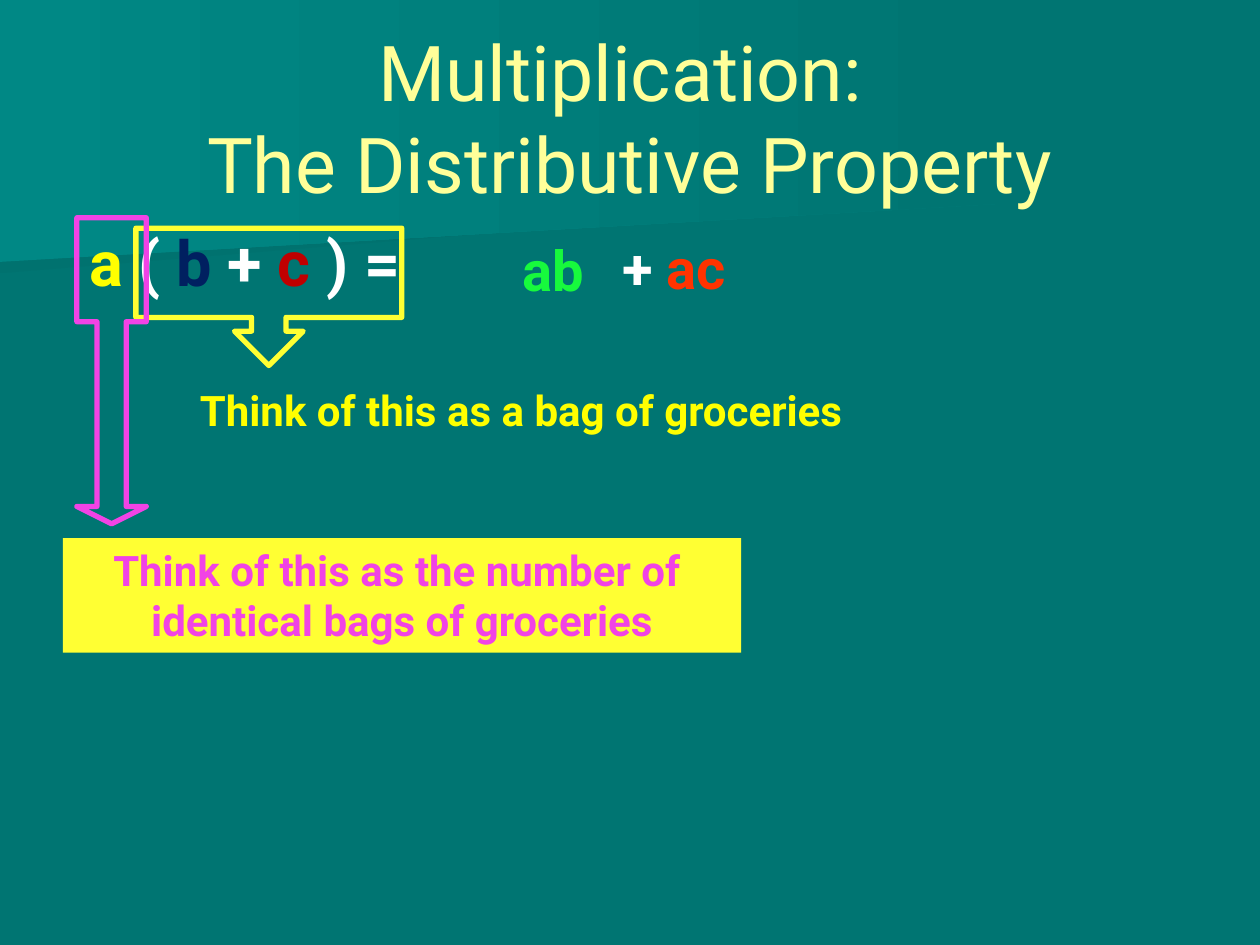
from pptx import Presentation
from pptx.dml.color import RGBColor
from pptx.enum import shapes as sh, text as tx
from pptx.util import Cm, Pt

FONT = "Roboto"
TEAL = RGBColor(0x00, 0x75, 0x72)
DARK = RGBColor(0x00, 0x72, 0x6F)
LIGHT = RGBColor(0x00, 0x88, 0x85)
CREAM = RGBColor(0xFF, 0xFF, 0x99)
YELLOW = RGBColor(0xFF, 0xFF, 0x00)
GOLD = RGBColor(0xFF, 0xFF, 0x33)
PINK = RGBColor(0xF1, 0x43, 0xE5)
WHITE = RGBColor(0xFF, 0xFF, 0xFF)
NAVY = RGBColor(0x00, 0x20, 0x60)
RED = RGBColor(0xC0, 0x00, 0x00)
GREEN = RGBColor(0x17, 0xF9, 0x3D)
FLAME = RGBColor(0xFF, 0x33, 0x00)
LEFT, MID = tx.PP_ALIGN.LEFT, tx.PP_ALIGN.CENTER
TOP, CORE = tx.MSO_ANCHOR.TOP, tx.MSO_ANCHOR.MIDDLE


def write(frame, lines, size=24, bold=True, align=LEFT, anchor=TOP, soft=False):
    frame.word_wrap = True
    frame.auto_size = tx.MSO_AUTO_SIZE.NONE
    frame.vertical_anchor = anchor
    para = frame.paragraphs[0]
    for i, line in enumerate(lines):
        if i and soft:
            para.add_line_break()
        elif i:
            para = frame.add_paragraph()
        para.alignment = align
        for words, color in line:
            run = para.add_run()
            run.text = words
            font = run.font
            font.name, font.size, font.bold = FONT, Pt(size), bold
            font.color.rgb = color


def label(slide, box, lines, **style):
    part = slide.shapes.add_textbox(*map(Cm, box))
    write(part.text_frame, lines, **style)


def callout(slide, box, color, adjust=()):
    part = slide.shapes.add_shape(
        sh.MSO_SHAPE.DOWN_ARROW_CALLOUT, *map(Cm, box))
    part.shadow.inherit = False
    part.fill.background()
    part.line.color.rgb = color
    part.line.width = Pt(3)
    for i, value in enumerate(adjust):
        part.adjustments[i] = value


def beam(slide, points, start):
    first, *rest = [(Cm(x), Cm(y)) for x, y in points]
    path = slide.shapes.build_freeform(*first)
    path.add_line_segments(rest)
    part = path.convert_to_shape()
    part.shadow.inherit = False
    part.line.fill.background()
    part.fill.gradient()
    part.fill.gradient_angle = 0
    for stop, color, place in zip(part.fill.gradient_stops, (start, TEAL), (0, 1)):
        stop.color.rgb = color
        stop.position = place
    tree = part.element.getparent()
    tree.insert(2, part.element)


def backdrop(slide, x, y):
    fill = slide.background.fill
    fill.solid()
    fill.fore_color.rgb = TEAL
    beam(slide, [(x, y), (x + 20.12, y),
                 (x + 20.12, y + 4.11), (x, y + 5.28)], LIGHT)
    beam(slide, [(x, y + 2.57), (x + 19.79, y + 2.57),
                 (x + 19.76, y + 3.89), (x, y + 5.51)], DARK)


def heading(slide, box):
    title = slide.shapes.title
    title.left, title.top, title.width, title.height = map(Cm, box)
    write(title.text_frame,
          [[("Multiplication: ", CREAM)], [("The Distributive Property", CREAM)]],
          size=44, bold=False, align=MID, anchor=CORE, soft=True)


def formula(slide, x, y):
    label(slide, (x, y, 8.28, 1.8),
          [[("a ", YELLOW), ("( ", WHITE), ("b", NAVY), (" + ", WHITE),
            ("c", RED), (" ) =", WHITE)]], size=36)
    label(slide, (x + 8.74, y + 0.23, 1.9, 1.63), [[("ab", GREEN)]], size=32)
    label(slide, (x + 10.74, y + 0.2, 3.07, 1.63),
          [[("+ ", WHITE), ("ac", FLAME)]], size=32)


def bag(slide, x, y):
    callout(slide, (x, y, 5.36, 2.77), GOLD)
    label(slide, (x + 1.04, y + 3.02, 14.99, 1.27),
          [[("Think of this as a bag of groceries", YELLOW)]])


def count(slide, x, y):
    callout(slide, (x, y, 1.4, 6.17), PINK, (0.42, 0.5, 0.25, 0.34))
    note = slide.shapes.add_shape(
        sh.MSO_SHAPE.RECTANGLE, Cm(x - 0.28), Cm(y + 6.46), Cm(13.67), Cm(2.31))
    note.shadow.inherit = False
    note.fill.solid()
    note.fill.fore_color.rgb = GOLD
    note.line.fill.background()
    write(note.text_frame,
          [[("Think of this as the number of ", PINK)],
           [("identical bags of groceries", PINK)]], align=MID)


def main():
    deck = Presentation()
    deck.slide_width, deck.slide_height = Cm(25.4), Cm(19.05)
    slide = deck.slides.add_slide(deck.slide_layouts[5])
    backdrop(slide, 0, 0)
    heading(slide, (1.27, 0.76, 22.86, 3.18))
    formula(slide, 1.55, 4.39)
    bag(slide, 2.74, 4.6)
    count(slide, 1.55, 4.39)
    deck.save("out.pptx")


if __name__ == "__main__":
    main()
